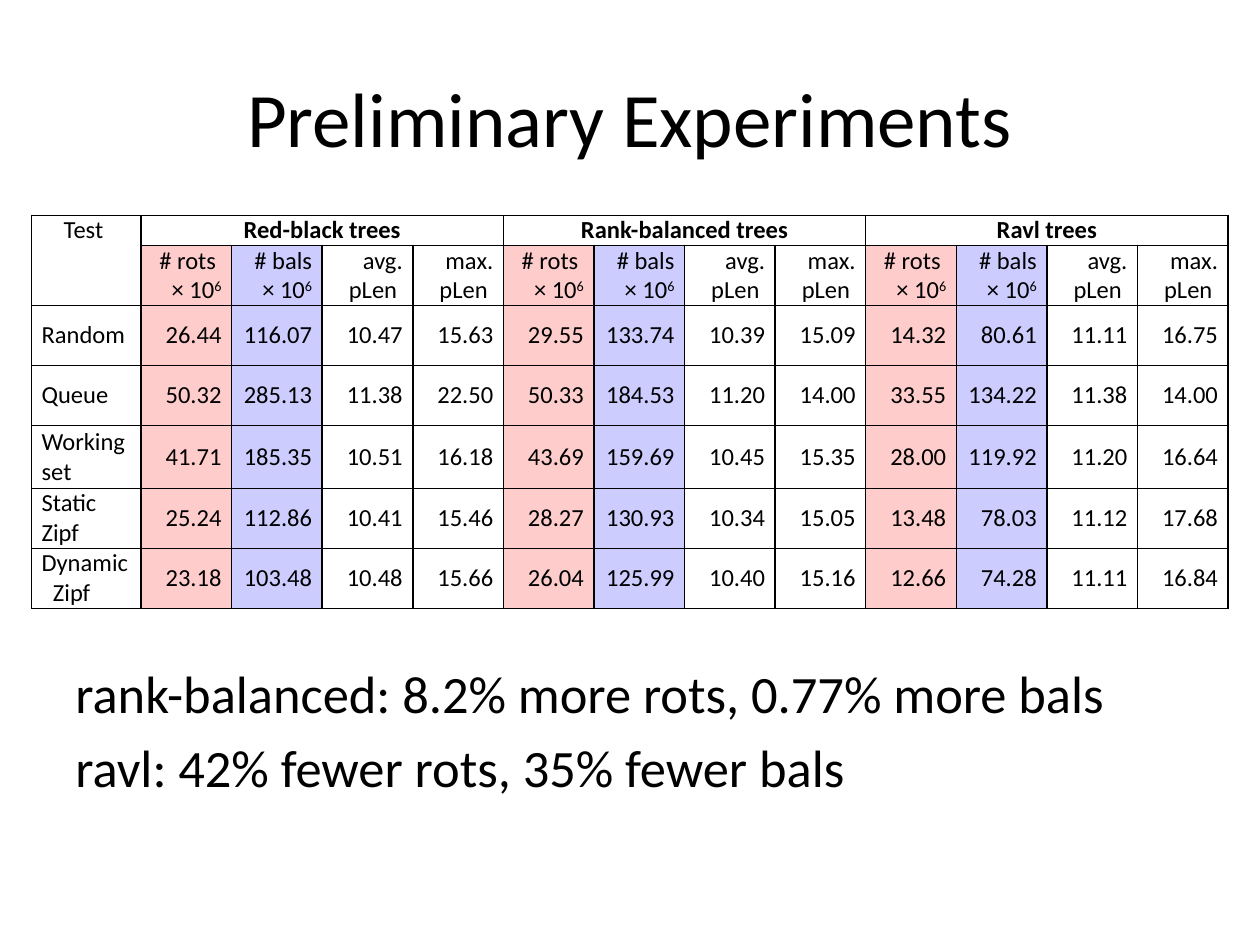
"""Build the Preliminary Experiments slide comparing balanced search trees."""
from lxml.etree import SubElement
from pptx import Presentation
from pptx.dml.color import RGBColor
from pptx.enum.text import MSO_ANCHOR, PP_ALIGN
from pptx.oxml.ns import qn
from pptx.util import Inches, Pt

COLORS = {"text": "000000", "border": "000000", "rots": "FFCCCC", "bals": "CCCCFF"}
FONT = "Calibri"
TITLE = "Preliminary Experiments"
FINDINGS = [
    "rank-balanced: 8.2% more rots, 0.77% more bals",
    "ravl: 42% fewer rots, 35% fewer bals",
]
TREES = ["Red-black trees", "Rank-balanced trees", "Ravl trees"]
MEASURES = [
    (["# rots ", "× 10^6"], "rots"),
    (["# bals", "× 10^6"], "bals"),
    (["avg.", "pLen "], None),
    (["max.", "pLen "], None),
]
RESULTS = [
    (["Random"], "26.44 116.07 10.47 15.63 29.55 133.74 10.39 15.09 14.32 80.61 11.11 16.75"),
    (["Queue"], "50.32 285.13 11.38 22.50 50.33 184.53 11.20 14.00 33.55 134.22 11.38 14.00"),
    (["Working set"], "41.71 185.35 10.51 16.18 43.69 159.69 10.45 15.35 28.00 119.92 11.20 16.64"),
    (["Static Zipf"], "25.24 112.86 10.41 15.46 28.27 130.93 10.34 15.05 13.48 78.03 11.12 17.68"),
    (["Dynamic", "Zipf"], "23.18 103.48 10.48 15.66 26.04 125.99 10.40 15.16 12.66 74.28 11.11 16.84"),
]
LEFT, TOP, WIDTH, HEIGHT = 0.25, 1.71, 9.5, 3.12
NAME_WIDTH, TALL_ROW, TALL_INDEX = 0.87, 0.5, 4
LINE = (HEIGHT - TALL_ROW) / 11


def write(tf, lines, size=14, bold=False, align=PP_ALIGN.LEFT, gap=0, indent=0):
    """Fill a text frame; ^ starts a superscript, gap and indent apply after line one."""
    tf.word_wrap = True
    for i, line in enumerate(lines):
        p = tf.paragraphs[0] if i == 0 else tf.add_paragraph()
        p.alignment = align
        if i:
            p.space_before = Pt(gap)
            p._p.get_or_add_pPr().set("marL", str(Inches(indent)))
        for j, part in enumerate(line.split("^")):
            r = p.add_run()
            r.text = part
            r.font.name, r.font.size, r.font.bold = FONT, Pt(size), bold
            r.font.color.rgb = RGBColor.from_string(COLORS["text"])
            if j:
                r._r.get_or_add_rPr().set("baseline", "30000")


def style_cell(cell, color=None):
    """Set the insets, fill and borders of a table cell."""
    cell.margin_left = cell.margin_right = Inches(0.08)
    cell.margin_top = cell.margin_bottom = 0
    if color:
        cell.fill.solid()
        cell.fill.fore_color.rgb = RGBColor.from_string(COLORS[color])
    else:
        cell.fill.background()
    tcPr = cell._tc.get_or_add_tcPr()
    for i, side in enumerate(("lnL", "lnR", "lnT", "lnB")):
        ln = SubElement(tcPr, qn(f"a:{side}"), w=str(Pt(1)))
        fill = SubElement(ln, qn("a:solidFill"))
        SubElement(fill, qn("a:srgbClr"), val=COLORS["border"])
        tcPr.insert(i, ln)


def add_results(s):
    """Add the table of results."""
    n_rows, n_cols = len(RESULTS) + 2, len(TREES) * len(MEASURES) + 1
    table = s.shapes.add_table(n_rows, n_cols, Inches(LEFT), Inches(TOP),
                               Inches(WIDTH), Inches(HEIGHT)).table
    table.first_row = table.horz_banding = False
    for c, col in enumerate(table.columns):
        col.width = Inches((WIDTH - NAME_WIDTH) / (n_cols - 1) if c else NAME_WIDTH)
    for r, row in enumerate(table.rows):
        row.height = Inches(TALL_ROW if r == TALL_INDEX else 2 * LINE if r else LINE)
        for c, cell in enumerate(row.cells):
            measure = MEASURES[(c - 1) % len(MEASURES)]
            style_cell(cell, measure[1] if r and c else None)
            if r == 1 and c:
                cell.vertical_anchor = MSO_ANCHOR.BOTTOM
                write(cell.text_frame, measure[0], align=PP_ALIGN.RIGHT)
            elif r > 1:
                cell.vertical_anchor = MSO_ANCHOR.MIDDLE
                name, values = RESULTS[r - 2]
                if c:
                    write(cell.text_frame, [values.split()[c - 1]], align=PP_ALIGN.RIGHT)
                else:
                    write(cell.text_frame, name, indent=0.09)
    table.cell(0, 0).merge(table.cell(1, 0))
    write(table.cell(0, 0).text_frame, ["Test "], align=PP_ALIGN.CENTER)
    for i, tree in enumerate(TREES):
        first = 1 + i * len(MEASURES)
        cell = table.cell(0, first)
        cell.merge(table.cell(0, first + len(MEASURES) - 1))
        write(cell.text_frame, [tree], bold=True, align=PP_ALIGN.CENTER)


def main():
    prs = Presentation()
    prs.slide_width, prs.slide_height = Inches(10), Inches(7.5)
    s = prs.slides.add_slide(prs.slide_layouts[6])
    title = s.shapes.add_textbox(Inches(0.5), Inches(0.3), Inches(9), Inches(1.25))
    title.text_frame.vertical_anchor = MSO_ANCHOR.MIDDLE
    write(title.text_frame, [TITLE], size=44, align=PP_ALIGN.CENTER)
    findings = s.shapes.add_textbox(Inches(0.5), Inches(5.2), Inches(9), Inches(1.63))
    write(findings.text_frame, FINDINGS, size=30, gap=6)
    add_results(s)
    prs.save("out.pptx")


if __name__ == "__main__":
    main()
